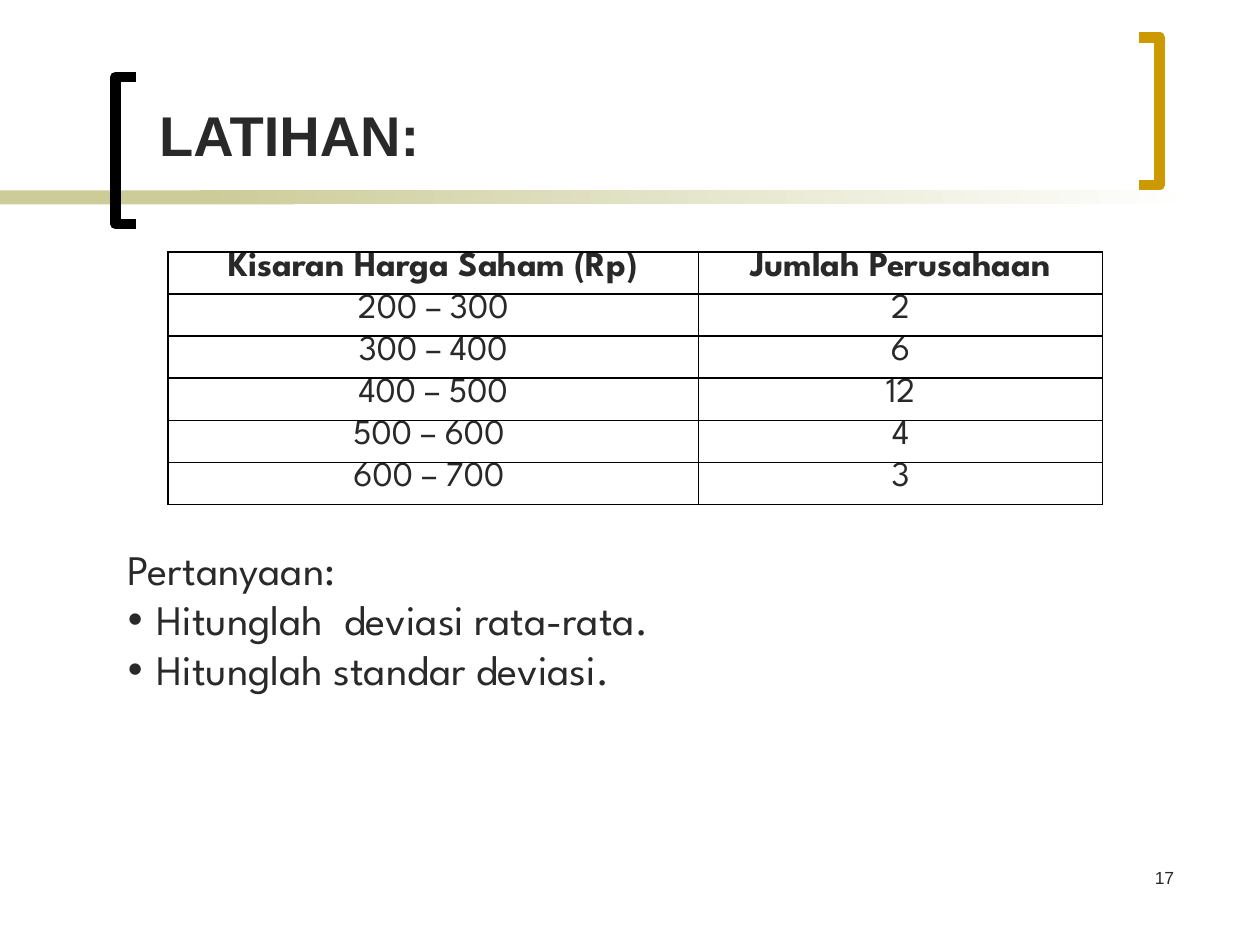
"""Build the LATIHAN exercise slide with a frequency table and two questions."""
import pptx
import pptx.dml.color
import pptx.enum.text
import pptx.oxml
import pptx.oxml.ns
import pptx.util
from pptx.enum.shapes import MSO_SHAPE

Cm = pptx.util.Cm
Pt = pptx.util.Pt
ALIGN = pptx.enum.text.PP_ALIGN

COLORS = {
    "text": "292929",
    "olive": "CCCC99",
    "white": "FFFFFF",
    "black": "000000",
    "gold": "CC9900",
}
HEADING_FONT = "Arial"
BODY_FONT = "League Spartan"
ROWS = [
    ("Kisaran Harga Saham (Rp)", "Jumlah Perusahaan"),
    ("200 – 300", "2"),
    ("300 – 400", "6"),
    ("400 – 500", "12"),
    ("500 – 600 ", "4"),
    ("600 – 700 ", "3"),
]
QUESTIONS = ["Hitunglah  deviasi rata-rata.", "Hitunglah standar deviasi."]


def rgb(name):
    return pptx.dml.color.RGBColor.from_string(COLORS[name])


def format_paragraph(p, font, size, bold=False, align=ALIGN.LEFT):
    p.alignment = align
    for r in p.runs:
        r.font.name = font
        r.font.size = Pt(size)
        r.font.bold = bold
        r.font.color.rgb = rgb("text")


def add_bar(s, left, width, end_color=None):
    sp = s.shapes.add_shape(
        MSO_SHAPE.RECTANGLE, Cm(left), Cm(3.84), Cm(width), Cm(0.28))
    sp.shadow.inherit = False
    sp.line.fill.background()
    if end_color is None:
        sp.fill.solid()
        sp.fill.fore_color.rgb = rgb("olive")
        return
    sp.fill.gradient()
    sp.fill.gradient_angle = 0
    for stop, name in zip(sp.fill.gradient_stops, ("olive", end_color)):
        stop.color.rgb = rgb(name)


def add_bracket(s, spine, top, arm, color):
    """Draw a square bracket whose arms reach from the spine by arm."""
    height = 2.97
    builder = s.shapes.build_freeform(Cm(spine + arm), Cm(top))
    builder.add_line_segments(
        [(Cm(spine), Cm(top)), (Cm(spine), Cm(top + height)),
         (Cm(spine + arm), Cm(top + height))], close=False)
    sp = builder.convert_to_shape()
    sp.shadow.inherit = False
    sp.fill.background()
    sp.line.color.rgb = rgb(color)
    sp.line.width = Pt(6)


def add_text(s, left, top, width, height, lines):
    tf = s.shapes.add_textbox(
        Cm(left), Cm(top), Cm(width), Cm(height)).text_frame
    tf.word_wrap = True
    tf.text = "\n".join(lines)
    return tf


def add_bullet(p):
    pPr = p._p.get_or_add_pPr()
    pPr.set("marL", str(Cm(0.58)))
    pPr.set("indent", str(-Cm(0.58)))
    ns = pptx.oxml.ns.nsdecls("a")
    pPr.append(pptx.oxml.parse_xml(f'<a:buFont {ns} typeface="Arial"/>'))
    pPr.append(pptx.oxml.parse_xml(f'<a:buChar {ns} char="•"/>'))


def add_questions(s):
    tf = add_text(s, 2.33, 10.8, 18.42, 4.37, ["Pertanyaan:", *QUESTIONS])
    tf.margin_top = Cm(0.17)
    for i, p in enumerate(tf.paragraphs):
        format_paragraph(p, BODY_FONT, 24)
        p.line_spacing = Pt(28.6)
        if i > 0:
            add_bullet(p)


def set_borders(cell):
    tcPr = cell._tc.get_or_add_tcPr()
    for side in ("lnL", "lnR", "lnT", "lnB"):
        tcPr.append(pptx.oxml.parse_xml(
            f'<a:{side} {pptx.oxml.ns.nsdecls("a")} w="{Pt(1)}"><a:solidFill>'
            f'<a:srgbClr val="{COLORS["black"]}"/></a:solidFill></a:{side}>'))


def add_table(s):
    widths = (10.69, 8.15)
    row_height = 0.74
    table = s.shapes.add_table(
        len(ROWS), len(widths), Cm(3.39), Cm(5.08),
        Cm(sum(widths)), Cm(row_height * len(ROWS))).table
    table.first_row = False
    table.horz_banding = False
    for column, width in zip(table.columns, widths):
        column.width = Cm(width)
    for i, values in enumerate(ROWS):
        table.rows[i].height = Cm(row_height)
        for j, value in enumerate(values):
            cell = table.cell(i, j)
            set_borders(cell)
            cell.fill.background()
            cell.margin_left = cell.margin_right = Cm(0.18)
            cell.margin_top = cell.margin_bottom = 0
            cell.text_frame.text = value
            format_paragraph(cell.text_frame.paragraphs[0], BODY_FONT, 20,
                             bold=i == 0, align=ALIGN.CENTER)


def main():
    prs = pptx.Presentation()
    prs.slide_width, prs.slide_height = Cm(25.4), Cm(19.05)
    s = prs.slides.add_slide(prs.slide_layouts[6])
    add_bar(s, 0, 5.93)
    add_bar(s, 4.02, 20.11, end_color="white")
    add_bracket(s, 2.33, 1.55, 0.42, "black")
    add_bracket(s, 23.38, 0.76, -0.42, "gold")
    number = add_text(s, 18.63, 17.36, 5.29, 1.27, ["17"])
    format_paragraph(number.paragraphs[0], HEADING_FONT, 10, align=ALIGN.RIGHT)
    add_table(s)
    add_questions(s)
    title = add_text(s, 2.96, 1.9, 18.42, 1.62, ["LATIHAN:"])
    format_paragraph(title.paragraphs[0], HEADING_FONT, 32, bold=True)
    prs.save("out.pptx")


if __name__ == "__main__":
    main()
